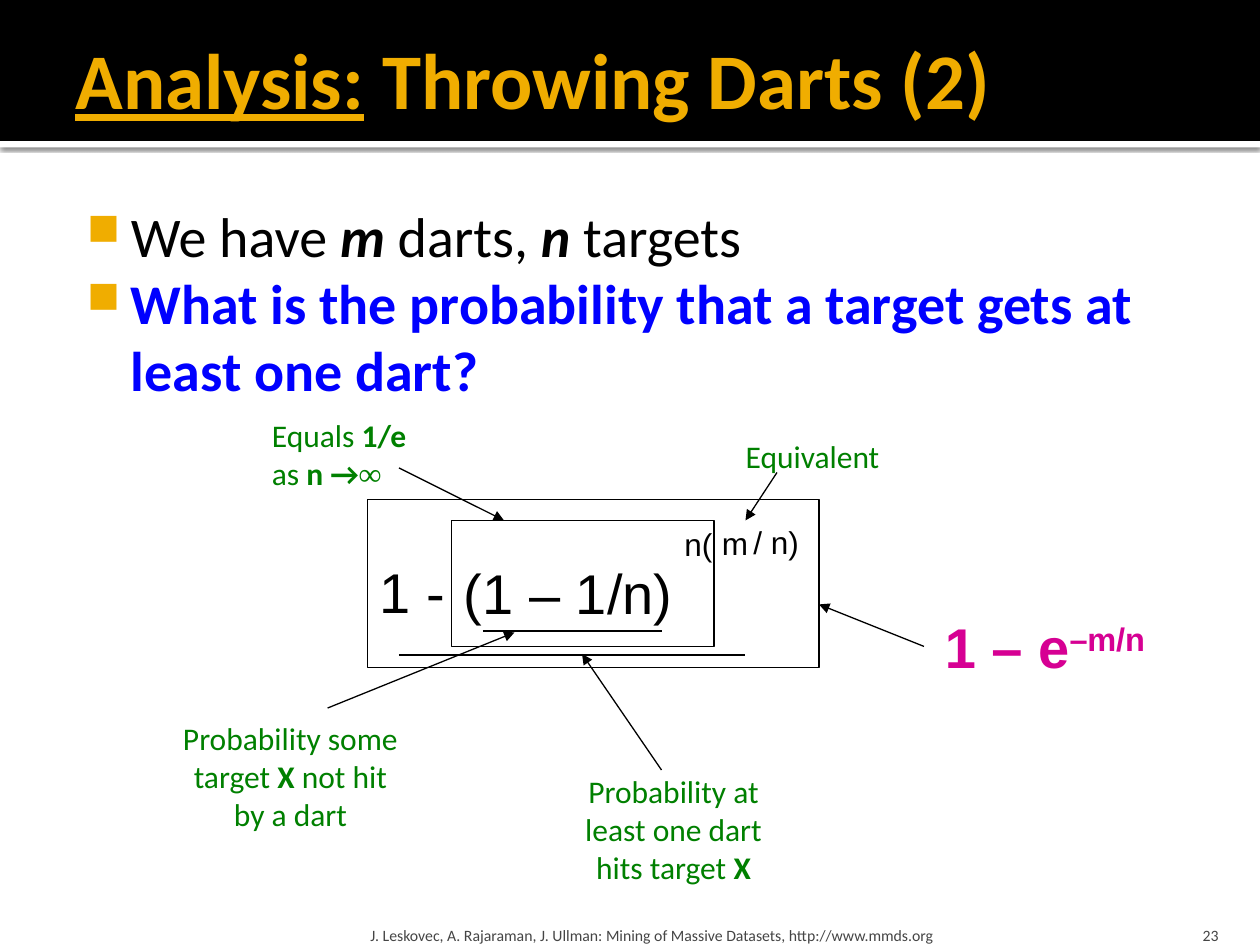
from lxml import etree
from pptx import Presentation
from pptx import util as u
from pptx.dml.color import RGBColor
from pptx.enum import shapes, text
from pptx.oxml import ns

Pt = u.Pt
COLORS = {
    "black": "000000", "white": "FFFFFF", "gold": "F0AD00", "blue": "0000FF",
    "green": "008000", "magenta": "D60093", "grey": "454545",
}
LEFT, CENTER, RIGHT = text.PP_ALIGN.LEFT, text.PP_ALIGN.CENTER, text.PP_ALIGN.RIGHT
TOP, MIDDLE, BOTTOM = (text.MSO_ANCHOR.TOP, text.MSO_ANCHOR.MIDDLE,
                       text.MSO_ANCHOR.BOTTOM)


def rgb(name):
    return RGBColor.from_string(COLORS[name])


def sub(parent, tag, **attrs):
    return etree.SubElement(parent, ns.qn(tag), attrs)


def add_bullet(p):
    """Square gold bullet with a hanging indent."""
    pPr = p._p.get_or_add_pPr()
    pPr.set("marL", str(Pt(34.5)))
    pPr.set("indent", str(Pt(-25.2)))
    sub(sub(pPr, "a:buClr"), "a:srgbClr", val=COLORS["gold"])
    sub(pPr, "a:buSzPct", val="80000")
    sub(pPr, "a:buChar", char="■")


def add_text(s, box, paras, size=18, font="Calibri", color="black", bold=False,
             align=LEFT, anchor=TOP, wrap=False, insets=(7.2, 3.6, 7.2, 3.6),
             bullet=False):
    """Each paragraph is a list of runs: a string, or (string, run format)."""
    sp = s.shapes.add_textbox(*map(Pt, box))
    tf = sp.text_frame
    tf.word_wrap = wrap
    tf.vertical_anchor = anchor
    tf.margin_left, tf.margin_top, tf.margin_right, tf.margin_bottom = map(Pt, insets)
    for i, runs in enumerate(paras):
        p = tf.add_paragraph() if i else tf.paragraphs[0]
        p.alignment = align
        if bullet:
            add_bullet(p)
        for run in runs:
            words, fmt = (run, {}) if isinstance(run, str) else run
            r = p.add_run()
            r.text = words
            r.font.size = Pt(size)
            r.font.name = fmt.get("font", font)
            r.font.bold = fmt.get("bold", bold)
            r.font.italic = fmt.get("italic", False)
            r.font.underline = fmt.get("underline", False)
            r.font.color.rgb = rgb(fmt.get("color", color))
            if "raised" in fmt:
                r._r.get_or_add_rPr().set("baseline", str(fmt["raised"] * 1000))
    return sp


def add_rect(s, box, fill=None, line=None):
    sp = s.shapes.add_shape(shapes.MSO_SHAPE.RECTANGLE, *map(Pt, box))
    sp.shadow.inherit = False
    if fill:
        sp.fill.solid()
        sp.fill.fore_color.rgb = rgb(fill)
    else:
        sp.fill.background()
    if line:
        sp.line.color.rgb = rgb(line)
        sp.line.width = Pt(0.75)
    else:
        sp.line.fill.background()
    return sp


def add_line(s, start, end, width=0.75, arrow=True):
    c = s.shapes.add_connector(shapes.MSO_CONNECTOR.STRAIGHT,
                               *map(Pt, (*start, *end)))
    c.line.color.rgb = rgb("black")
    c.line.width = Pt(width)
    if arrow:
        sub(c.line._get_or_add_ln(), "a:tailEnd", type="triangle")
    sub(c._element.spPr, "a:effectLst")
    return c


def add_header(s):
    strip = add_rect(s, (0, 80.6, 720, 3.6), fill="white")
    effects = strip._element.spPr.find(ns.qn("a:effectLst"))
    shadow = sub(effects, "a:outerShdw", blurRad=str(Pt(2.5)), dist=str(Pt(0.8)),
                 dir="5400000", algn="tl", rotWithShape="0")
    sub(sub(shadow, "a:srgbClr", val=COLORS["black"]), "a:alpha", val="60000")
    add_rect(s, (0, 0, 720, 80.6), fill="black")
    add_text(s, (36, 5.8, 648, 77.8),
             [[("Analysis:", {"underline": True}), " Throwing Darts (2)"]],
             size=45, color="gold", bold=True, anchor=MIDDLE, wrap=True,
             insets=(7.2, 3.6, 3.6, 3.6))


def add_question(s):
    variable = {"bold": True, "italic": True}
    add_text(s, (36, 108, 648, 167.8), [
        ["We have ", ("m", variable), " darts, ", ("n", variable), " targets"],
        [("What is the probability that a target gets at least one dart?",
          {"bold": True, "color": "blue"})],
    ], size=32, wrap=True, bullet=True, insets=(4.3, 7.2, 7.2, 3.6))


def add_formula(s):
    # Base of the formula, then its exponent
    for words, size, box in [
        ("1 -", 32, (210, 315, 52, 46)),
        ("(1 – 1/n)", 32, (258, 315.5, 134.5, 46)),
        ("n(", 18, (384, 296.6, 31, 29)),
        ("m", 18, (405.4, 296, 29.5, 29)),
        ("/ n)", 18, (423.4, 295.2, 41, 29)),
    ]:
        add_text(s, box, [[words]], size=size, font="Arial")
    # Frames around the whole formula and around its base
    add_rect(s, (210, 285.4, 258, 96), line="black")
    add_rect(s, (258, 297.4, 150, 72), line="black")
    # Underlines
    add_line(s, (276, 360.6), (378, 360.6), width=1, arrow=False)
    add_line(s, (228, 374.5), (426, 374.5), width=1, arrow=False)
    # Result
    add_text(s, (532.8, 346.3, 137, 46), [["1 – e", ("–m/n", {"raised": 30})]],
             size=32, font="Arial", color="magenta", bold=True)


def add_notes_on_formula(s):
    strong = {"bold": True}
    infinity = {"bold": True, "font": "Times New Roman"}
    notes = [
        ((148.3, 234, 91.4, 51), LEFT, False,
         [["Equals ", ("1/e", strong)],
          ["as ", ("n →", strong), ("∞", infinity)]]),
        ((419, 246.2, 92.2, 29), LEFT, False, [["Equivalent"]]),
        ((96.5, 407.5, 139, 72.7), CENTER, False,
         [["Probability some"], ["target ", ("X", strong), " not hit"],
          ["by a dart"]]),
        ((304.6, 437.8, 160.6, 75.6), CENTER, True,
         [["Probability at"], ["least one dart"],
          ["hits target ", ("X", strong)]]),
    ]
    for box, align, wrap, paras in notes:
        add_text(s, box, paras, color="green", align=align, wrap=wrap)
    # Arrows from the notes and the result to the formula
    for start, end in [
        ((228, 267.4), (288, 297.4)),
        ((444, 270), (426, 297.4)),
        ((187.2, 404.6), (294, 361.4)),
        ((378, 440), (332.6, 373.7)),
        ((528, 369.4), (468, 345.4)),
    ]:
        add_line(s, start, end)


def add_footer(s):
    add_text(s, (208, 518.4, 433.4, 21.6),
             [["J. Leskovec, A. Rajaraman, J. Ullman: Mining of Massive Datasets, "
               "http://www.mmds.org"]],
             size=9, color="grey", anchor=BOTTOM, wrap=True,
             insets=(3.6, 3.6, 3.6, 0))
    add_text(s, (645.8, 518.4, 57.6, 21.6), [["23"]], size=9, color="grey",
             align=RIGHT, anchor=BOTTOM, wrap=True, insets=(7.2, 3.6, 7.2, 0))


def main():
    prs = Presentation()
    prs.slide_width, prs.slide_height = Pt(720), Pt(540)
    s = prs.slides.add_slide(prs.slide_layouts[6])
    add_header(s)
    add_question(s)
    add_formula(s)
    add_notes_on_formula(s)
    add_footer(s)
    prs.save("out.pptx")


if __name__ == "__main__":
    main()
